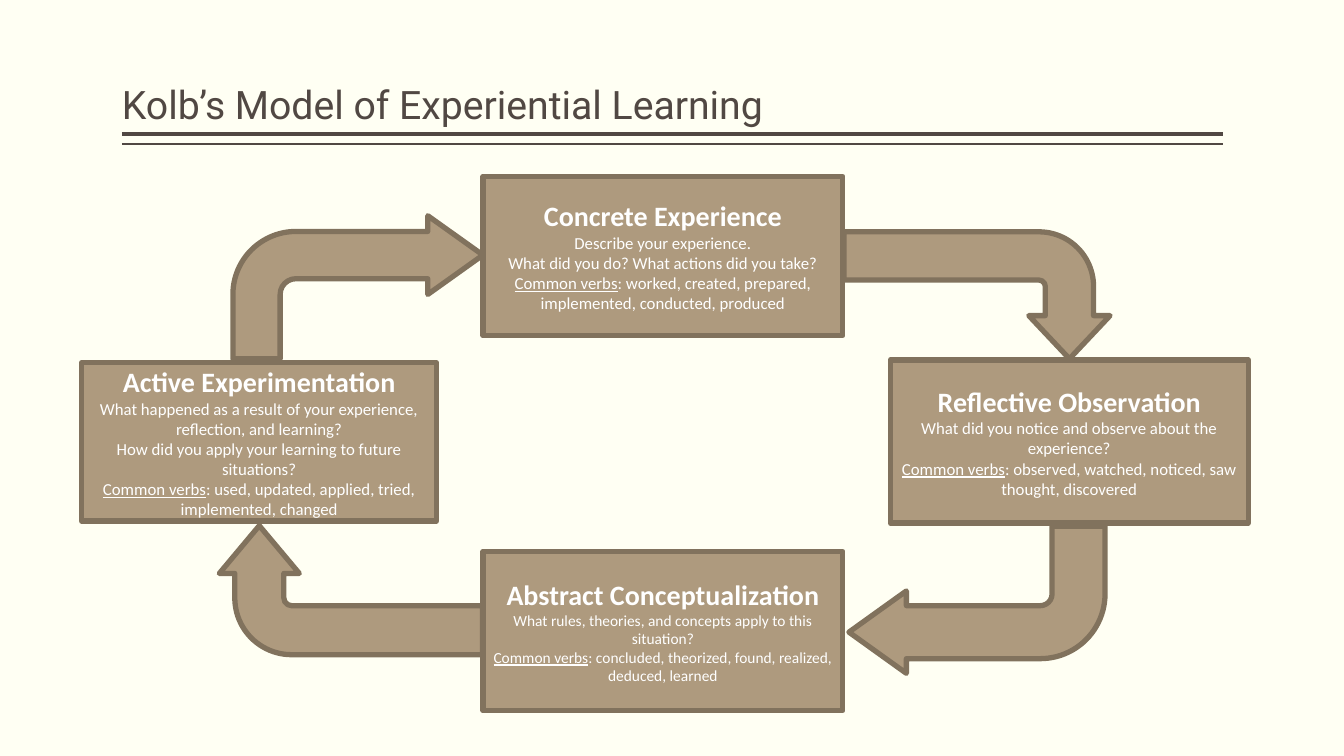
from pptx import Presentation
from pptx.dml.color import RGBColor
from pptx.enum.shapes import MSO_CONNECTOR, MSO_SHAPE
from pptx.enum.text import MSO_ANCHOR, MSO_AUTO_SIZE, PP_ALIGN
from pptx.oxml.ns import qn
from pptx.util import Inches, Pt
from lxml import etree

STRAIGHT = MSO_CONNECTOR.STRAIGHT
RECTANGLE, BENT_ARROW = MSO_SHAPE.RECTANGLE, MSO_SHAPE.BENT_ARROW
MIDDLE, BOTTOM = MSO_ANCHOR.MIDDLE, MSO_ANCHOR.BOTTOM
LEFT, CENTER = PP_ALIGN.LEFT, PP_ALIGN.CENTER
CREAM, DARK, TAN, BROWN, WHITE = "FFFFF3", "514843", "AE9A7E", "81725D", "FFFFFF"


def add_span(para, text, size=12, font="Calibri", color=WHITE, bold=False, underline=False):
    span = para.add_run()
    span.text = text
    span.font.size = Pt(size)
    span.font.name = font
    span.font.color.rgb = RGBColor.from_string(color)
    span.font.bold = bold
    span.font.underline = underline


def add_tan_shape(page, kind, place):
    shape = page.shapes.add_shape(kind, *[Inches(length) for length in place])
    shape.shadow.inherit = False
    shape.fill.solid()
    shape.fill.fore_color.rgb = RGBColor.from_string(TAN)
    shape.line.color.rgb = RGBColor.from_string(BROWN)
    shape.line.width = Pt(3.78)
    return shape


deck = Presentation()
deck.slide_width, deck.slide_height = Inches(13.33), Inches(7.5)
page = deck.slides.add_slide(deck.slide_layouts[5])
page.background.fill.solid()
page.background.fill.fore_color.rgb = RGBColor.from_string(CREAM)

# Double rule under the title
for top, weight in [(1.33, 3), (1.43, 1)]:
    rule = page.shapes.add_connector(
        STRAIGHT, Inches(1.21), Inches(top), Inches(12.13), Inches(top))
    rule.line.color.rgb = RGBColor.from_string(DARK)
    rule.line.width = Pt(weight)
    etree.SubElement(rule._element.spPr, qn("a:effectLst"))

# Title
title = page.shapes.title
title.left, title.top = Inches(1.21), Inches(0.39)
title.width, title.height = Inches(10.92), Inches(0.93)
frame = title.text_frame
frame.word_wrap = True
frame.auto_size = MSO_AUTO_SIZE.NONE
frame.vertical_anchor = BOTTOM
frame.margin_left = frame.margin_right = 0
frame.margin_top = frame.margin_bottom = Inches(0.05)
frame.paragraphs[0].alignment = LEFT
frame.paragraphs[0].line_spacing = 0.9
add_span(frame.paragraphs[0], "Kolb’s Model of Experiential Learning",
         size=28, font="Roboto", color=DARK)

# Stages: place, heading, body size, questions, verbs
stages = [
    ((8.83, 3.57, 3.55, 1.62), "Reflective Observation", 12,
     ["What did you notice and observe about the experience?"],
     "observed, watched, noticed, saw thought, discovered"),
    ((4.79, 5.47, 3.57, 1.58), "Abstract Conceptualization", 11,
     ["What rules, theories, and concepts apply to this situation?"],
     "concluded, theorized, found, realized, deduced, learned"),
    ((0.81, 3.6, 3.52, 1.57), "Active Experimentation", 12,
     ["What happened as a result of your experience, reflection, and learning?",
      "How did you apply your learning to future situations?"],
     "used, updated, applied, tried, implemented, changed"),
    ((4.79, 1.75, 3.57, 1.58), "Concrete Experience", 12,
     ["Describe your experience.", "What did you do? What actions did you take?"],
     "worked, created, prepared, implemented, conducted, produced"),
]
for place, heading, size, questions, verbs in stages:
    frame = add_tan_shape(page, RECTANGLE, place).text_frame
    frame.word_wrap = True
    frame.vertical_anchor = MIDDLE
    add_span(frame.paragraphs[0], heading, size=20, bold=True)
    for question in questions:
        add_span(frame.add_paragraph(), question, size=size)
    para = frame.add_paragraph()
    add_span(para, "Common verbs", size=size, underline=True)
    add_span(para, ": " + verbs, size=size)
    for para in frame.paragraphs:
        para.alignment = CENTER

# Arrows of the cycle: place before rotation, rotation, adjustments
arrows = [
    ((2.31, 2.14, 2.48, 1.42), 0, (0.33, 0.275, 0.385, 0.44)),
    ((9.06, 1.61, 1.26, 2.64), 90, (0.38, 0.32, 0.34, 0.43)),
    ((2.84, 4.55, 1.28, 2.61), 270, (0.38, 0.31, 0.37, 0.44)),
    ((8.42, 5.22, 2.54, 1.46), 180, (0.36, 0.28, 0.39, 0.44)),
]
for place, rotation, adjustments in arrows:
    arrow = add_tan_shape(page, BENT_ARROW, place)
    arrow.rotation = rotation
    for index, value in enumerate(adjustments):
        arrow.adjustments[index] = value

deck.save("out.pptx")
